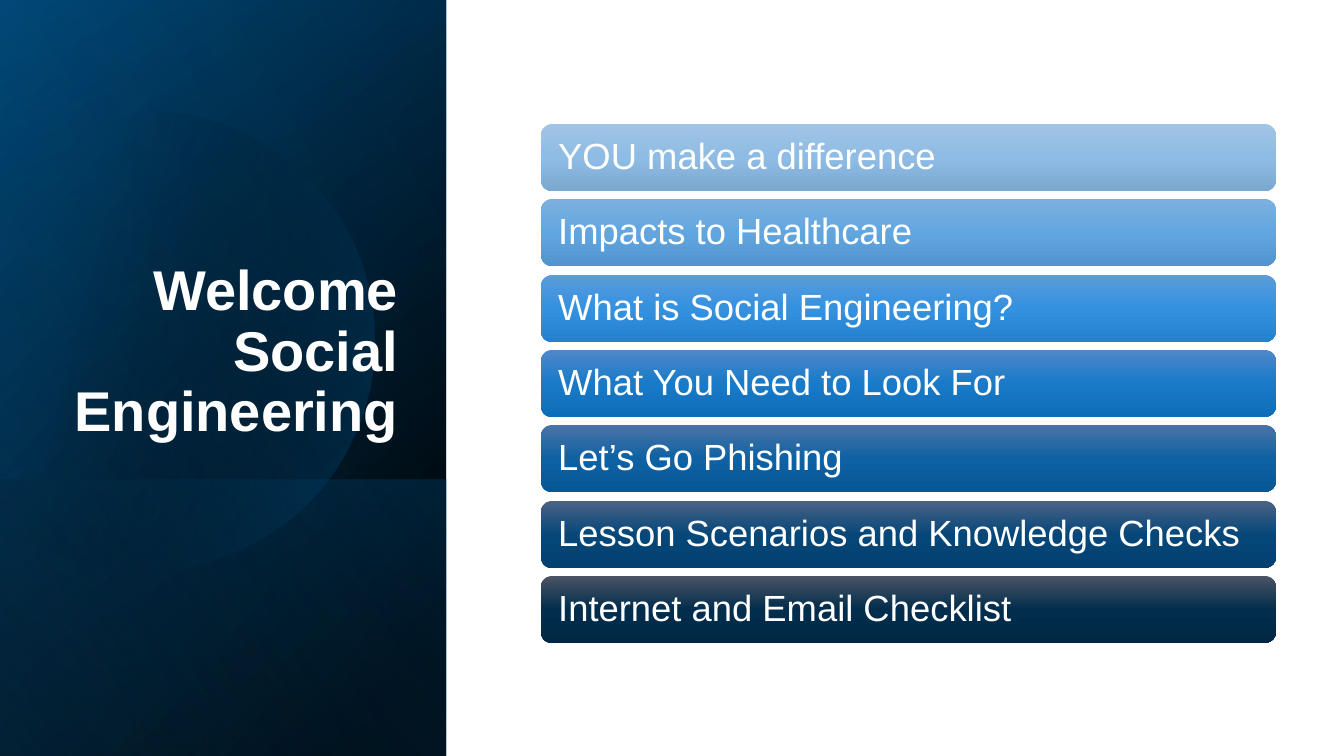
from lxml import etree
from pptx import Presentation
from pptx.dml.color import RGBColor
from pptx.enum.shapes import MSO_SHAPE
from pptx.enum.text import MSO_ANCHOR, MSO_AUTO_SIZE, PP_ALIGN
from pptx.oxml.ns import qn
from pptx.util import Pt

RECTANGLE = MSO_SHAPE.RECTANGLE
ROUNDED = MSO_SHAPE.ROUNDED_RECTANGLE
MIDDLE = MSO_ANCHOR.MIDDLE
BOTTOM = MSO_ANCHOR.BOTTOM
LEFT = PP_ALIGN.LEFT
RIGHT = PP_ALIGN.RIGHT
NO_AUTOFIT = MSO_AUTO_SIZE.NONE

SLIDE_W, SLIDE_H = 1344, 756
EMU_PER_PX = 12192000 / SLIDE_W
PANEL_W = 446
LOWER_BAND_H = 276

COLORS = {
    "text": "FFFFFF",
    "black": "000000",
    "navy": "003E68",
    "blue": "00538A",
    "sky": "20A6FF",
}

PANEL_BASE = [(8, "black", 100), (100, "navy", 100)]
PANEL_GLOW = [(0, "black", 0), (99, "blue", 46)]
LOWER_BAND = [(2, "blue", 29), (100, "black", 30)]
DISC_GLOW = [(29, "black", 0), (100, "blue", 43)]
PANEL_SHEEN = [(0, "black", 0), (99, "sky", 11)]

DISC_START = (150, 111)
DISC_CURVES = [
    [(248, 113), (338, 178), (366, 277)],
    [(401, 400), (331, 527), (209, 562)],
    [(132, 585), (53, 566), (-3, 518)],
    [(-15, 507), (-15, 507), (-15, 507)],
    [(-15, 176), (-15, 176), (-15, 176)],
    [(0, 162), (23, 143), (81, 120)],
    [(104, 114), (127, 111), (150, 111)],
]

TOPICS = [
    ("YOU make a difference", ["A0C4E5", "8FBCE4", "7AA8CF"]),
    ("Impacts to Healthcare", ["7CB0DF", "62A6E0", "5194CE"]),
    ("What is Social Engineering?", ["5C9CDC", "3391DF", "2481CF"]),
    ("What You Need to Look For", ["4F88CB", "187AC8", "0E6DB9"]),
    ("Let’s Go Phishing", ["4C74A8", "0E61A2", "065796"]),
    ("Lesson Scenarios and Knowledge Checks", ["4B6285", "064779", "014070"]),
    ("Internet and Email Checklist", ["4B5464", "022D4C", "002845"]),
]
BAR_LEFT, BAR_TOP, BAR_W, BAR_H = 541, 124, 735, 67
BAR_SPAN = 452


def emu(px):
    return round(px * EMU_PER_PX)


def curve_points(start, curves, steps=16):
    points = []
    for first, second, end in curves:
        for step in range(1, steps + 1):
            t = step / steps
            weights = ((1 - t) ** 3, 3 * t * (1 - t) ** 2, 3 * t * t * (1 - t), t ** 3)
            corners = (start, first, second, end)
            points.append(tuple(
                emu(sum(w * c[axis] for w, c in zip(weights, corners)))
                for axis in (0, 1)
            ))
        start = end
    return points


class SlideBuilder:
    font = "Arial"
    line_spacing = 0.9

    def __init__(self, slide):
        self.slide = slide

    def gradient(self, shape, stops, angle):
        shape.shadow.inherit = False
        shape.line.fill.background()
        shape.fill.gradient()
        shape.fill.gradient_angle = (360 - angle) % 360
        stop_list = shape._element.spPr.find(qn("a:gradFill")).find(qn("a:gsLst"))
        for old_stop in list(stop_list):
            stop_list.remove(old_stop)
        for position, color, opacity in stops:
            stop = etree.SubElement(stop_list, qn("a:gs"), pos=str(position * 1000))
            value = etree.SubElement(stop, qn("a:srgbClr"), val=COLORS.get(color, color))
            if opacity < 100:
                etree.SubElement(value, qn("a:alpha"), val=str(opacity * 1000))

    def panel_layer(self, top, height, stops, angle):
        left = (PANEL_W - height) / 2
        turned_top = top + (height - PANEL_W) / 2
        layer = self.slide.shapes.add_shape(
            RECTANGLE, emu(left), emu(turned_top), emu(height), emu(PANEL_W))
        layer.rotation = 90
        layer._element.spPr.find(qn("a:xfrm")).set("flipH", "1")
        self.gradient(layer, stops, angle)

    def disc(self, start, curves, stops, angle):
        outline = self.slide.shapes.build_freeform(emu(start[0]), emu(start[1]))
        outline.add_line_segments(curve_points(start, curves), close=True)
        self.gradient(outline.convert_to_shape(), stops, angle)

    def fill_text(self, frame, lines, size, align, anchor, bold=False):
        frame.word_wrap = True
        frame.auto_size = NO_AUTOFIT
        frame.vertical_anchor = anchor
        paragraph = frame.paragraphs[0]
        paragraph.alignment = align
        paragraph.line_spacing = self.line_spacing
        for index, line in enumerate(lines):
            if index:
                paragraph.add_line_break()
            run = paragraph.add_run()
            run.text = line
            run.font.name = self.font
            run.font.size = Pt(size)
            run.font.bold = bold
            run.font.color.rgb = RGBColor.from_string(COLORS["text"])

    def title(self, lines, left, top, width, height):
        heading = self.slide.shapes.title
        heading.left, heading.top = emu(left), emu(top)
        heading.width, heading.height = emu(width), emu(height)
        heading._element.getparent().append(heading._element)
        self.fill_text(heading.text_frame, lines, 40, RIGHT, BOTTOM, bold=True)

    def topic_bar(self, topic, shades, top):
        bar = self.slide.shapes.add_shape(
            ROUNDED, emu(BAR_LEFT), emu(top), emu(BAR_W), emu(BAR_H))
        stops = [(index * 50, shade, 100) for index, shade in enumerate(shades)]
        self.gradient(bar, stops, 90)
        frame = bar.text_frame
        frame.margin_left = frame.margin_right = emu(14)
        self.fill_text(frame, [topic], 26, LEFT, MIDDLE)


def main():
    deck = Presentation()
    deck.slide_width, deck.slide_height = emu(SLIDE_W), emu(SLIDE_H)
    builder = SlideBuilder(deck.slides.add_slide(deck.slide_layouts[5]))

    builder.panel_layer(0, SLIDE_H, PANEL_BASE, 50)
    builder.panel_layer(0, SLIDE_H, PANEL_GLOW, 30)
    builder.panel_layer(SLIDE_H - LOWER_BAND_H, LOWER_BAND_H, LOWER_BAND, 130)
    builder.disc(DISC_START, DISC_CURVES, DISC_GLOW, 14)
    builder.panel_layer(0, SLIDE_H, PANEL_SHEEN, 120)

    builder.title(["Welcome", "Social Engineering"], 64, 185, 344, 264)

    pitch = BAR_SPAN / (len(TOPICS) - 1)
    for index, (topic, shades) in enumerate(TOPICS):
        builder.topic_bar(topic, shades, round(BAR_TOP + index * pitch))

    deck.save("out.pptx")


if __name__ == "__main__":
    main()
